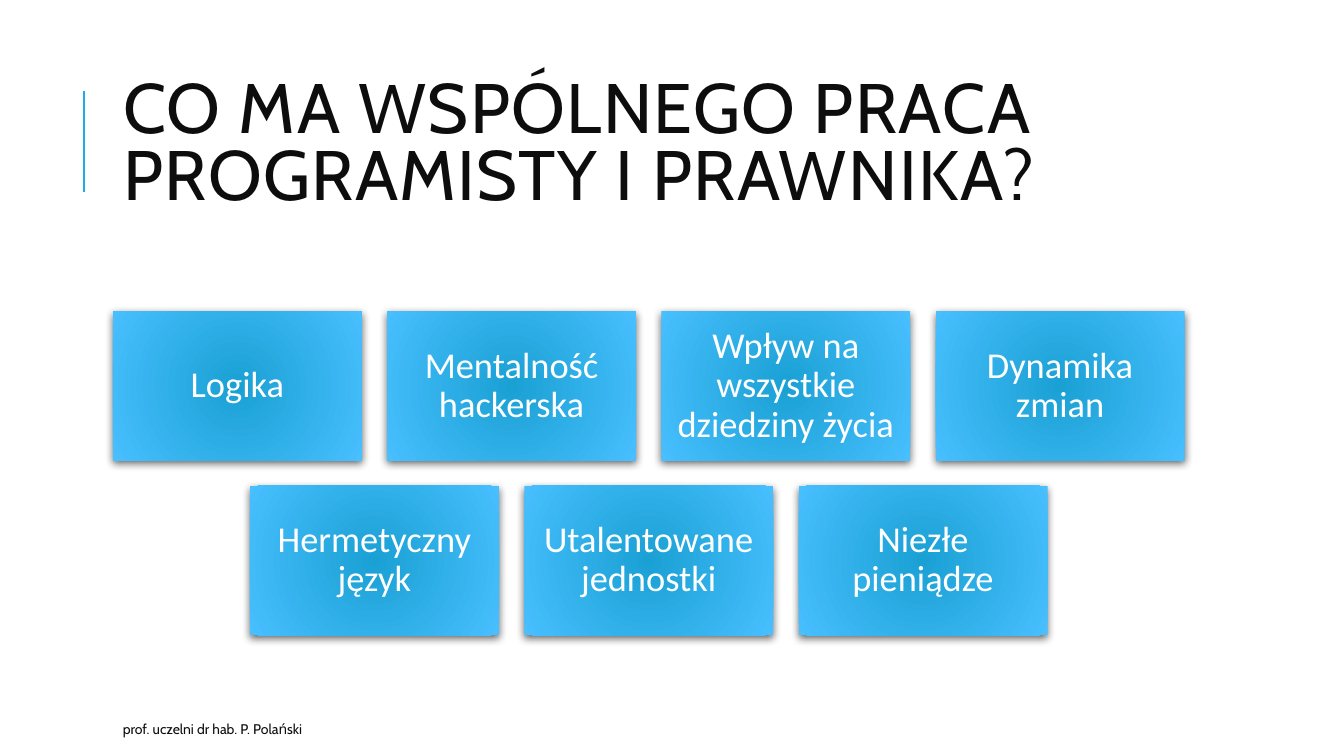
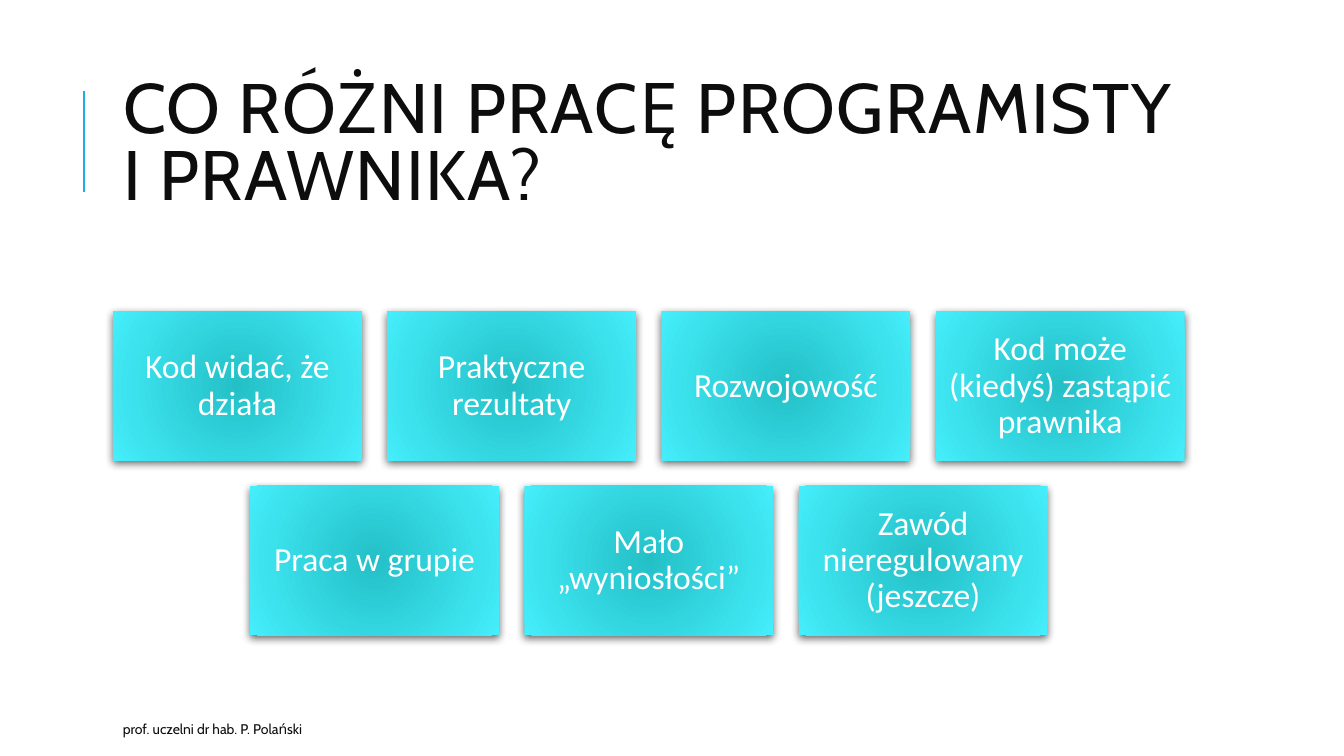
from dataclasses import dataclass

from lxml.etree import SubElement
from pptx import Presentation
from pptx.dml.color import RGBColor
from pptx.enum.shapes import MSO_CONNECTOR, MSO_SHAPE
from pptx.enum.text import MSO_ANCHOR, MSO_AUTO_SIZE, PP_ALIGN
from pptx.oxml.ns import qn
from pptx.util import Inches, Pt


@dataclass(frozen=True)
class Theme:
    heading_font: str = "Cabin"
    tile_font: str = "Calibri"
    ink: str = "0D0D0D"
    accent: str = "1CADE4"
    tile_ink: str = "FFFFFF"
    shadow: str = "000000"
    blue: tuple = ("1AA1D4", "48BFFF")
    turquoise: tuple = ("24C0C8", "44EEFA")
    title_size: int = 50
    footer_size: int = 10
    large_tile_size: int = 26
    small_tile_size: int = 24


THEME = Theme()
LEFT, CONTENT_WIDTH = 1.12, 10.63
GRID_TOP, TILE_WIDTH, TILE_HEIGHT, GAP = 3.09, 2.47, 1.48, 0.25
FOOTER = "prof. uczelni dr hab. P. Polański"


def format_text(frame, font_name, size, color, align=PP_ALIGN.LEFT, spacing=1.0):
    frame.word_wrap = True
    frame.auto_size = MSO_AUTO_SIZE.NONE
    frame.vertical_anchor = MSO_ANCHOR.MIDDLE
    for paragraph in frame.paragraphs:
        paragraph.alignment = align
        paragraph.line_spacing = spacing
        for run in paragraph.runs:
            run.font.name = font_name
            run.font.size = Pt(size)
            run.font.color.rgb = RGBColor.from_string(color)


def add_title(slide, heading):
    title = slide.shapes.title
    title.left, title.top = Inches(LEFT), Inches(0.64)
    title.width, title.height = Inches(CONTENT_WIDTH), Inches(1.64)
    title.text_frame.text = heading
    format_text(title.text_frame, THEME.heading_font, THEME.title_size,
                THEME.ink, spacing=0.8)
    for run in title.text_frame.paragraphs[0].runs:
        run.font._element.set("spc", "100")


def add_accent_line(slide):
    accent = slide.shapes.add_connector(
        MSO_CONNECTOR.STRAIGHT, Inches(0.83), Inches(1.9), Inches(0.83), Inches(0.9))
    accent.line.color.rgb = RGBColor.from_string(THEME.accent)
    accent.line.width = Pt(1.5)
    SubElement(accent._element.spPr, qn("a:effectLst"))


def add_footer(slide):
    footer = slide.shapes.add_textbox(
        Inches(LEFT), Inches(7.08), Inches(2.36), Inches(0.3))
    footer.text_frame.text = FOOTER
    format_text(footer.text_frame, THEME.heading_font, THEME.footer_size, THEME.ink)


def fill_radial(shape, colors):
    shape.fill.gradient()
    for stop, color in zip(shape.fill.gradient_stops, colors):
        stop.color.rgb = RGBColor.from_string(color)
    gradient = shape._element.spPr.find(qn("a:gradFill"))
    gradient.remove(gradient.find(qn("a:lin")))
    radial = SubElement(gradient, qn("a:path"), {"path": "circle"})
    SubElement(radial, qn("a:fillToRect"), dict.fromkeys("ltrb", "100000"))


def add_shadow(shape):
    shape.shadow.inherit = False
    effects = shape._element.spPr.find(qn("a:effectLst"))
    shadow = SubElement(effects, qn("a:outerShdw"), {
        "blurRad": str(Pt(6)), "dist": str(Pt(2)), "dir": "5400000",
        "algn": "ctr", "rotWithShape": "0"})
    color = SubElement(shadow, qn("a:srgbClr"), {"val": THEME.shadow})
    SubElement(color, qn("a:alpha"), {"val": "60000"})


def add_tile(slide, left, top, label, colors, size, inset):
    tile = slide.shapes.add_shape(
        MSO_SHAPE.RECTANGLE, Inches(left), Inches(top),
        Inches(TILE_WIDTH), Inches(TILE_HEIGHT))
    fill_radial(tile, colors)
    tile.line.fill.background()
    add_shadow(tile)
    frame = tile.text_frame
    frame.margin_left = frame.margin_right = Inches(inset)
    frame.margin_top = frame.margin_bottom = Inches(inset)
    frame.text = label
    format_text(frame, THEME.tile_font, size, THEME.tile_ink, PP_ALIGN.CENTER, 0.9)


def add_tile_rows(slide, rows, colors, size, inset):
    for row, labels in enumerate(rows):
        row_width = len(labels) * (TILE_WIDTH + GAP) - GAP
        row_left = LEFT + (CONTENT_WIDTH - row_width) / 2
        top = GRID_TOP + row * (TILE_HEIGHT + GAP)
        for column, label in enumerate(labels):
            left = row_left + column * (TILE_WIDTH + GAP)
            add_tile(slide, left, top, label, colors, size, inset)


def add_tile_slide(deck, heading, rows, colors, size, inset):
    slide = deck.slides.add_slide(deck.slide_layouts.get_by_name("Title Only"))
    add_accent_line(slide)
    add_title(slide, heading)
    add_tile_rows(slide, rows, colors, size, inset)
    add_footer(slide)


def main():
    deck = Presentation()
    deck.slide_width, deck.slide_height = Inches(13.33), Inches(7.5)
    add_tile_slide(
        deck, "CO MA WSPÓLNEGO PRACA PROGRAMISTY I PRAWNIKA?",
        [["Logika", "Mentalność hackerska",
          "Wpływ na wszystkie dziedziny życia", "Dynamika zmian"],
         ["Hermetyczny język", "Utalentowane jednostki", "Niezłe pieniądze"]],
        THEME.blue, THEME.large_tile_size, 0.11)
    add_tile_slide(
        deck, "CO RÓŻNI PRACĘ PROGRAMISTY I PRAWNIKA?",
        [["Kod widać, że działa", "Praktyczne rezultaty",
          "Rozwojowość", "Kod może (kiedyś) zastąpić prawnika"],
         ["Praca w grupie", "Mało „wyniosłości”", "Zawód nieregulowany (jeszcze)"]],
        THEME.turquoise, THEME.small_tile_size, 0.1)
    deck.save("out.pptx")


if __name__ == "__main__":
    main()
